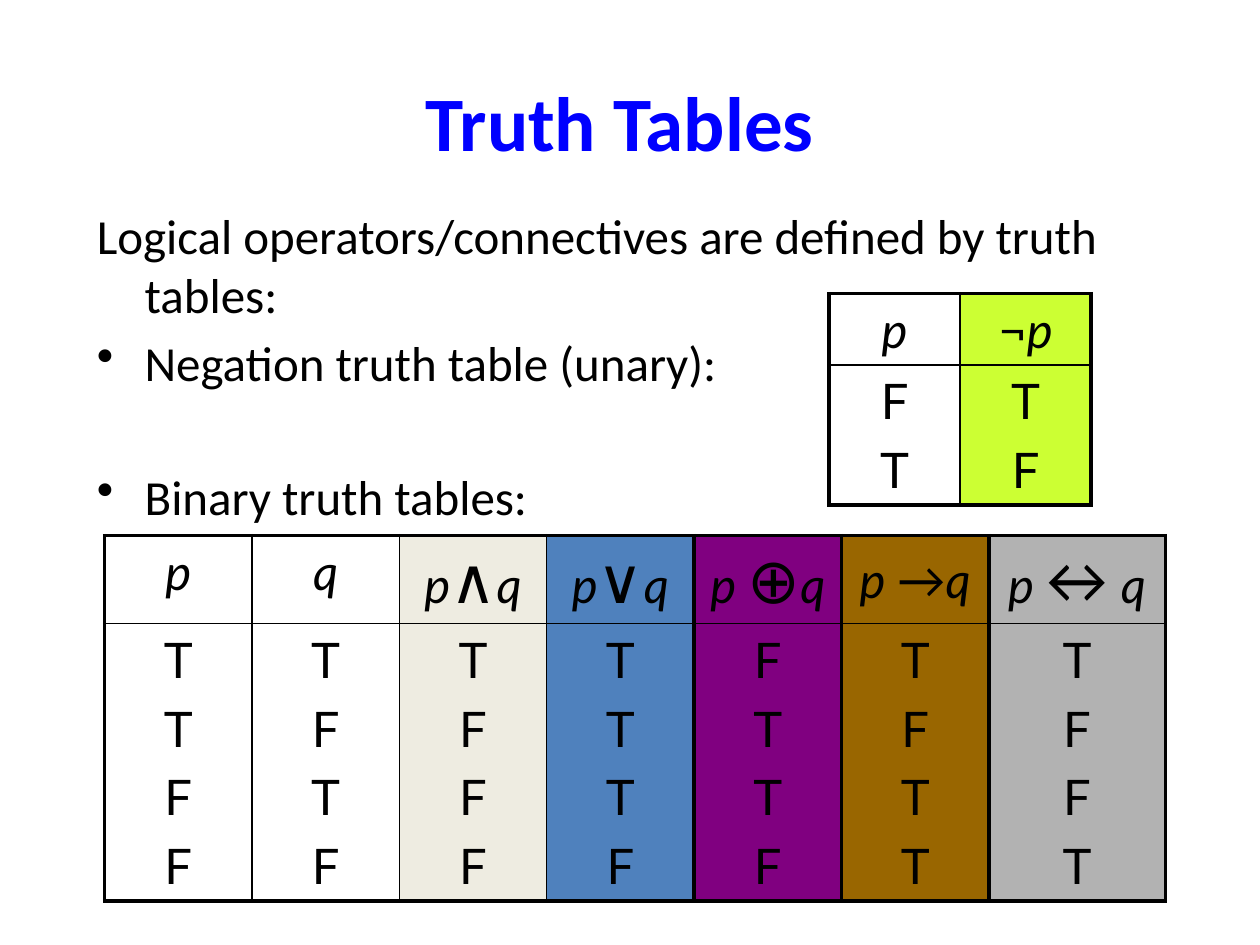
import pptx
import pptx.dml.color
import pptx.enum.text
import pptx.oxml
import pptx.oxml.ns
import pptx.util
from pptx.util import Inches

COLORS = {
    "title": "0000FF", "ink": "000000", "negation": "CCFF33",
    "and": "EEECE1", "or": "4F81BD", "xor": "800080",
    "implies": "996600", "iff": "B2B2B2",
}
THICK, THIN = 2.25, 1
CENTER = pptx.enum.text.PP_ALIGN.CENTER
MIDDLE = pptx.enum.text.MSO_ANCHOR.MIDDLE

# Each column: header runs (text, size, italic), fill name, truth values
P, Q = ("p", 28, True), ("q", 28, True)
P_SPACED = ("p ", 28, True)
NEGATION = [
    ([P], None, "FT"),
    ([("¬", 28, False), P], "negation", "TF"),
]
BINARY = [
    ([P], None, "TTFF"),
    ([Q], None, "TFTF"),
    ([P, ("∧", 36, False), Q], "and", "TFFF"),
    ([P, ("∨", 36, False), Q], "or", "TTTF"),
    ([P_SPACED, ("⊕", 36, False), Q], "xor", "FTTF"),
    ([P_SPACED, ("→", 28, False), Q], "implies", "TFTT"),
    ([P_SPACED, ("↔", 36, False), (" ", 28, False), Q], "iff", "TFFT"),
]


def rgb(name):
    return pptx.dml.color.RGBColor.from_string(COLORS[name])


def style(paragraph, font_name, size, color="ink", space=5.6):
    paragraph.space_before = pptx.util.Pt(space)
    paragraph.font.name = font_name
    paragraph.font.size = pptx.util.Pt(size)
    paragraph.font.color.rgb = rgb(color)


def add_text_frame(slide, left, top, width, height):
    frame = slide.shapes.add_textbox(
        Inches(left), Inches(top), Inches(width), Inches(height)).text_frame
    frame.word_wrap = True
    return frame


def add_title(slide, text):
    frame = add_text_frame(slide, 0.67, 0.33, 8.5, 1.25)
    frame.vertical_anchor = MIDDLE
    title = frame.paragraphs[0]
    title.text = text
    title.alignment = CENTER
    style(title, "Calibri", 44, "title", 0)
    title.font.bold = True


def add_body(slide, lines):
    """Each line is (text, bulleted, space before in points)."""
    frame = add_text_frame(slide, 0.67, 1.58, 8.67, 5.33)
    for index, (text, bulleted, space) in enumerate(lines):
        line = frame.paragraphs[0] if index == 0 else frame.add_paragraph()
        line.text = text
        style(line, "Calibri", 28, space=space)
        properties = line._p.get_or_add_pPr()
        properties.set("marL", str(Inches(0.38)))
        properties.set("indent", str(-Inches(0.38)))
        if bulleted:
            bullet = pptx.oxml.parse_xml(
                f'<a:buChar {pptx.oxml.ns.nsdecls("a")} char="•"/>')
            properties.insert_element_before(
                bullet, "a:tabLst", "a:defRPr", "a:extLst")


def set_borders(cell, left, right, top, bottom):
    properties = cell._tc.get_or_add_tcPr()
    for side, width in zip("LRTB", (left, right, top, bottom)):
        properties.append(pptx.oxml.parse_xml(
            f'<a:ln{side} {pptx.oxml.ns.nsdecls("a")} w="{pptx.util.Pt(width)}">'
            f'<a:solidFill><a:srgbClr val="{COLORS["ink"]}"/></a:solidFill>'
            f'</a:ln{side}>'))


def set_fill(cell, name):
    if name:
        cell.fill.solid()
        cell.fill.fore_color.rgb = rgb(name)
    else:
        cell.fill.background()


def write_header(cell, runs):
    heading = cell.text_frame.paragraphs[0]
    heading.alignment = CENTER
    style(heading, "Lato", 28)
    for text, size, italic in runs:
        run = heading.add_run()
        run.text = text
        run.font.size = pptx.util.Pt(size)
        run.font.italic = italic


def write_values(cell, values):
    cell.text = "\n".join(values)
    for value in cell.text_frame.paragraphs:
        value.alignment = CENTER
        style(value, "Lato", 28)


def add_truth_table(slide, columns, position, widths, heights, total_height, thick_from):
    """Vertical edges are thick at the left side and from edge thick_from on."""
    left, top = position
    frame = slide.shapes.add_table(
        2, len(columns), Inches(left), Inches(top),
        Inches(sum(widths)), Inches(total_height))
    table = frame.table
    table.first_row = table.horz_banding = False
    for row, height in zip(table.rows, heights):
        row.height = Inches(height)
    frame.height = Inches(total_height)

    edges = [THICK if edge == 0 or edge >= thick_from else THIN
             for edge in range(len(columns) + 1)]
    for index, (header, fill, values) in enumerate(columns):
        table.columns[index].width = Inches(widths[index])
        header_cell, values_cell = table.cell(0, index), table.cell(1, index)
        write_header(header_cell, header)
        write_values(values_cell, values)
        set_borders(header_cell, edges[index], edges[index + 1], THICK, THIN)
        set_borders(values_cell, edges[index], edges[index + 1], THIN, THICK)
        set_fill(header_cell, fill)
        set_fill(values_cell, fill)
    return table


def main():
    deck = pptx.Presentation()
    deck.slide_width, deck.slide_height = Inches(10), Inches(7.5)
    slide = deck.slides.add_slide(deck.slide_layouts[6])

    # Title and text
    add_title(slide, "Truth Tables")
    add_body(slide, [
        ("Logical operators/connectives are defined by truth tables:", False, 5.6),
        ("Negation truth table (unary):", True, 5.6),
        ("Binary truth tables:", True, 43),
    ])

    # Truth tables
    add_truth_table(slide, NEGATION, (6.58, 2.33), [1.04] * 2,
                    (0.53, 1.1), 1.69, thick_from=2)
    binary = add_truth_table(slide, BINARY, (0.83, 4.25), [1.17] * 6 + [1.4],
                             (0.55, 1.78), 2.95, thick_from=4)
    binary.cell(0, 5).vertical_anchor = MIDDLE

    deck.save("out.pptx")


if __name__ == "__main__":
    main()
